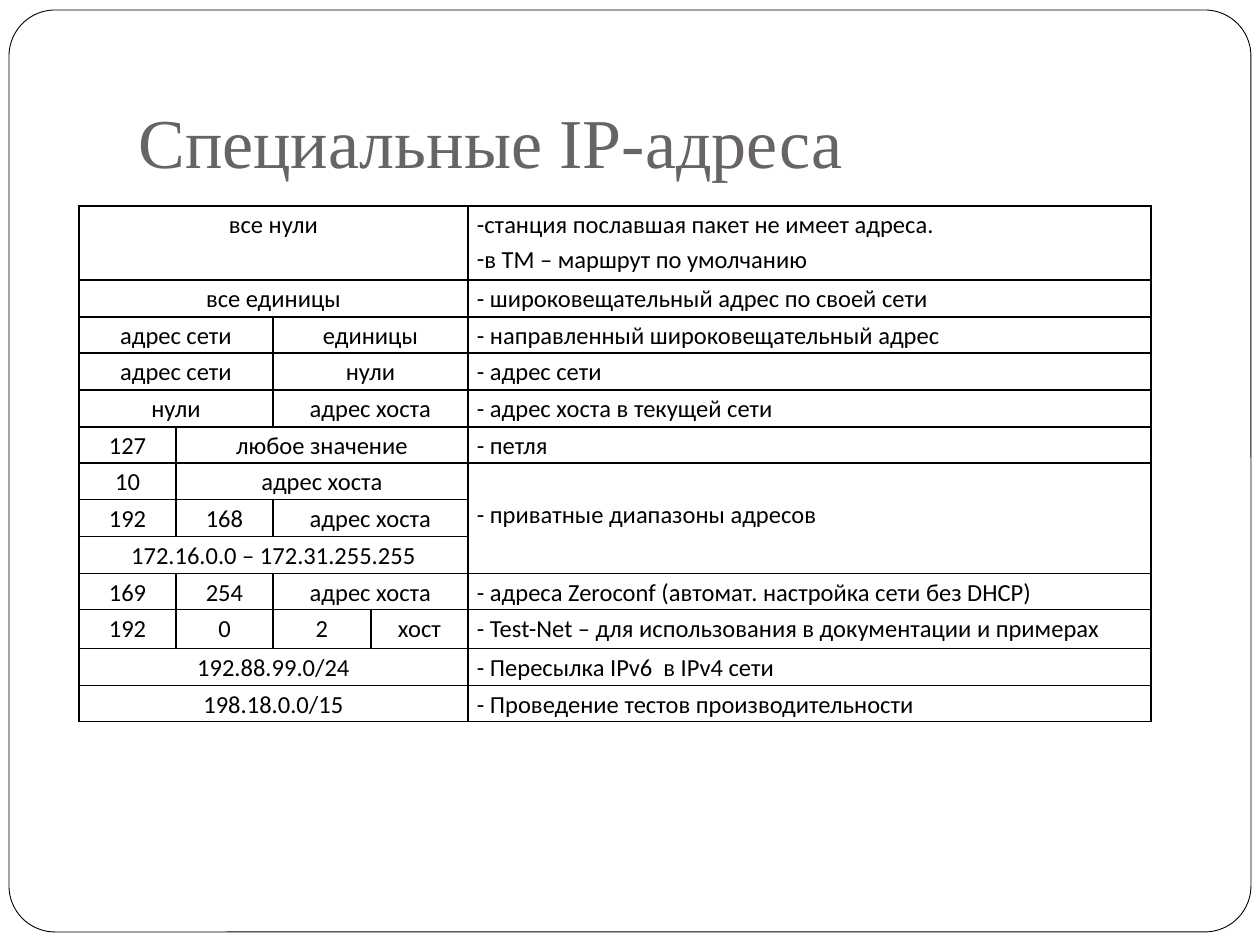
from dataclasses import dataclass
from itertools import product

from lxml import etree
from pptx import Presentation
from pptx import util as u
from pptx.dml.color import RGBColor
from pptx.enum import shapes, text
from pptx.oxml import ns

PX = 914400 / 126


@dataclass(frozen=True)
class Theme:
    ink: str = "000000"
    paper: str = "FFFFFF"
    heading: str = "696464"
    heading_font: str = "Times New Roman"
    body_font: str = "Calibri"
    heading_size: int = 40
    body_size: int = 14
    frame_line: float = 0.5
    grid_line: float = 1
    spacing: float = 1.15


THEME = Theme()
COLUMNS = [97, 97, 98, 97, 683]
HEIGHTS = [74, 37, 36, 37, 37, 36, 37, 37, 37, 36, 39, 37, 36]
ADDRESSES = [
    [("все нули", 4)],
    [("все единицы", 4)],
    [("адрес сети", 2), ("единицы", 2)],
    [("адрес сети", 2), ("нули", 2)],
    [("нули", 2), ("адрес хоста", 2)],
    [("127", 1), ("любое значение", 3)],
    [("10", 1), ("адрес хоста", 3)],
    [("192", 1), ("168", 1), ("адрес хоста", 2)],
    [("172.16.0.0 – 172.31.255.255", 4)],
    [("169", 1), ("254", 1), ("адрес хоста", 2)],
    [("192", 1), ("0", 1), ("2", 1), ("хост", 1)],
    [("192.88.99.0/24", 4)],
    [("198.18.0.0/15", 4)],
]
MEANINGS = {
    0: ["станция пославшая пакет не имеет адреса.", "в ТМ – маршрут по умолчанию"],
    1: ["- широковещательный адрес по своей сети"],
    2: ["- направленный широковещательный адрес"],
    3: ["- адрес сети"],
    4: ["- адрес хоста в текущей сети"],
    5: ["- петля"],
    6: ["- приватные диапазоны адресов"],
    9: ["- адреса Zeroconf (автомат. настройка сети без DHCP)"],
    10: ["- Test-Net – для использования в документации и примерах"],
    11: ["- Пересылка IPv6  в IPv4 сети"],
    12: ["- Проведение тестов производительности"],
}
PRIVATE_ROWS = (6, 8)


def px(length):
    return u.Emu(round(length * PX))


def rgb(colour):
    return RGBColor.from_string(colour)


def write(para, words, *, font=THEME.body_font, size=THEME.body_size,
          colour=THEME.ink, align=text.PP_ALIGN.LEFT, spacing=THEME.spacing,
          bullet=None):
    para.alignment = align
    para.line_spacing = spacing
    span = para.add_run()
    span.text = words
    span.font.name = font
    span.font.size = u.Pt(size)
    span.font.color.rgb = rgb(colour)
    if bullet:
        properties = para._p.get_or_add_pPr()
        properties.set("marL", "0")
        properties.set("indent", "0")
        etree.SubElement(properties, ns.qn("a:buFont"), typeface=font)
        etree.SubElement(properties, ns.qn("a:buChar"), char=bullet)


def outline_cell(cell):
    properties = cell._tc.get_or_add_tcPr()
    for index, side in enumerate(("lnL", "lnR", "lnT", "lnB")):
        line = etree.Element(ns.qn(f"a:{side}"), w=str(u.Pt(THEME.grid_line)))
        fill = etree.SubElement(line, ns.qn("a:solidFill"))
        etree.SubElement(fill, ns.qn("a:srgbClr"), val=THEME.ink)
        properties.insert(index, line)


def add_frame(page, left, top, width, height):
    frame = page.shapes.add_shape(shapes.MSO_SHAPE.ROUNDED_RECTANGLE,
                                  px(left), px(top), px(width), px(height))
    frame.adjustments[0] = 0.05
    frame.shadow.inherit = False
    frame.fill.solid()
    frame.fill.fore_color.rgb = rgb(THEME.paper)
    frame.line.color.rgb = rgb(THEME.ink)
    frame.line.width = u.Pt(THEME.frame_line)
    page.shapes.title.element.addprevious(frame.element)


def add_title(page, left, top, width, height):
    title = page.shapes.title
    title.left, title.top = px(left), px(top)
    title.width, title.height = px(width), px(height)
    box = title.text_frame
    box.word_wrap = True
    box.vertical_anchor = text.MSO_ANCHOR.BOTTOM
    box.margin_left = box.margin_right = box.margin_bottom = u.Inches(0.1)
    box.margin_top = u.Inches(0.05)
    write(box.paragraphs[0], "Специальные IP-адреса", font=THEME.heading_font,
          size=THEME.heading_size, colour=THEME.heading, spacing=1.0)


def add_address_table(page, left, top):
    table = page.shapes.add_table(len(HEIGHTS), len(COLUMNS), px(left), px(top),
                                  px(sum(COLUMNS)), px(sum(HEIGHTS))).table
    table.first_row = table.horz_banding = False
    for column, width in zip(table.columns, COLUMNS):
        column.width = px(width)
    for row, height in zip(table.rows, HEIGHTS):
        row.height = px(height)
    for row, column in product(range(len(HEIGHTS)), range(len(COLUMNS))):
        cell = table.cell(row, column)
        cell.margin_left = cell.margin_right = px(9)
        cell.margin_top = cell.margin_bottom = 0
        cell.fill.background()
        outline_cell(cell)

    for row, parts in enumerate(ADDRESSES):
        column = 0
        for words, span in parts:
            cell = table.cell(row, column)
            if span > 1:
                cell.merge(table.cell(row, column + span - 1))
            write(cell.text_frame.paragraphs[0], words, align=text.PP_ALIGN.CENTER)
            column += span

    last = len(COLUMNS) - 1
    first_private, last_private = PRIVATE_ROWS
    private = table.cell(first_private, last)
    private.merge(table.cell(last_private, last))
    private.vertical_anchor = text.MSO_ANCHOR.MIDDLE
    private.margin_bottom = px(10)
    for row, lines in MEANINGS.items():
        box = table.cell(row, last).text_frame
        for index, words in enumerate(lines):
            para = box.add_paragraph() if index else box.paragraphs[0]
            write(para, words, bullet="-" if len(lines) > 1 else None)


def main():
    deck = Presentation()
    deck.slide_width, deck.slide_height = px(1260), px(945)
    page = deck.slides.add_slide(deck.slide_layouts.get_by_name("Title Only"))
    add_frame(page, 9, 10, 1242, 922)
    add_title(page, 126, 38, 1071, 157)
    add_address_table(page, 79, 206)
    deck.save("out.pptx")


if __name__ == "__main__":
    main()
